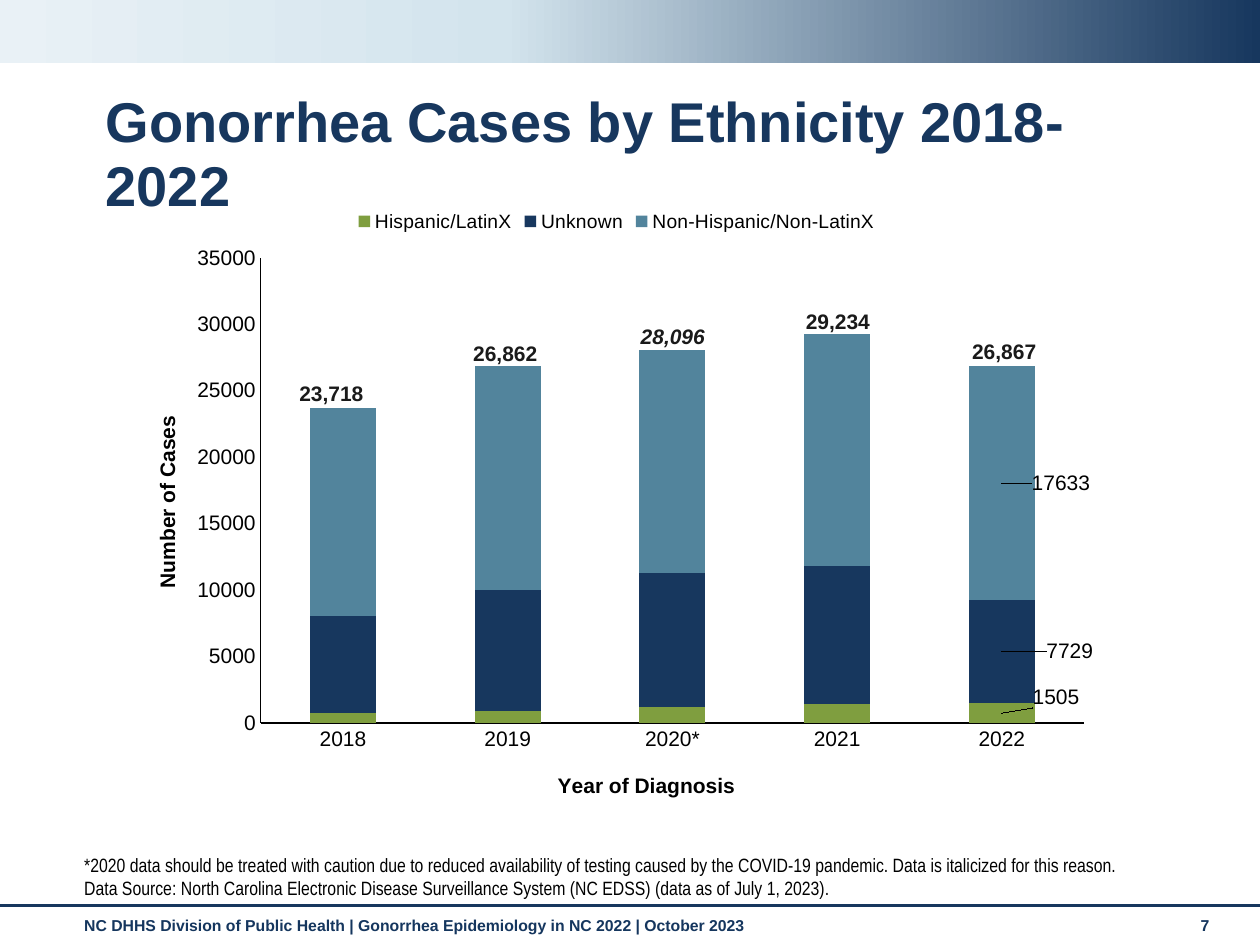
from copy import deepcopy

from lxml import etree
from pptx import Presentation
from pptx.chart.data import CategoryChartData
from pptx.dml.color import RGBColor
from pptx.enum import chart as charts, shapes, text
from pptx.oxml import parse_xml
from pptx.oxml.ns import nsdecls, qn
from pptx.util import Inches, Pt

COLORS = {
    "navy": "17375E", "footer": "15365E", "sky": "D3E4ED", "pale": "E9F1F6",
    "green": "7F9E3F", "teal": "52849C", "black": "000000", "total": "1A1A1A",
}
YEARS = ["2018", "2019", "2020*", "2021", "2022"]
# Name, colour, values, and offset of the 2022 label as a share of the chart
SERIES = [
    ("Hispanic/LatinX", "green", (745, 900, 1189, 1446, 1505), (0.055, -0.026)),
    ("Unknown", "navy", (7309, 9118, 10114, 10337, 7729), (0.069, 0)),
    ("Non-Hispanic/Non-LatinX", "teal", (15664, 16844, 16793, 17451, 17633), (0.06, 0)),
]
# Left, top, text and italic of the total above each column
TOTALS = [
    (2.14, 2.97, "23,718", False), (3.52, 2.65, "26,862", False),
    (4.85, 2.52, "28,096", True), (6.16, 2.4, "29,234", False),
    (7.48, 2.64, "26,867", False),
]


def rgb(name):
    return RGBColor.from_string(COLORS[name])


def style_font(font, size, color="black", bold=False, italic=False, name="Arial"):
    font.name, font.size = name, Pt(size)
    font.bold, font.italic = bold, italic
    font.color.rgb = rgb(color)


def add_text(page, place, lines, size, align=None, anchor=text.MSO_ANCHOR.TOP,
             spacing=None, **style):
    box = page.shapes.add_textbox(*map(Inches, place))
    frame = box.text_frame
    frame.word_wrap = True
    frame.vertical_anchor = anchor
    frame.text = "\n".join(lines)
    for para in frame.paragraphs:
        para.alignment = align
        para.line_spacing = spacing
        style_font(para.font, size, **style)


def add_banner(page):
    banner = page.shapes.add_shape(
        shapes.MSO_SHAPE.RECTANGLE, 0, 0, Inches(10), Inches(0.5))
    banner.shadow.inherit = False
    banner.line.fill.background()
    banner.fill.gradient()
    banner.fill.gradient_angle = 180
    stop_list = banner._element.spPr.find(".//" + qn("a:gsLst"))
    stop_list.insert(1, deepcopy(stop_list[0]))
    stops = ((0, "navy"), (0.6, "sky"), (1, "pale"))
    for stop, (position, color) in zip(banner.fill.gradient_stops, stops):
        stop.position = position
        stop.color.rgb = rgb(color)


def add_rule(page):
    rule = page.shapes.add_connector(
        shapes.MSO_CONNECTOR.STRAIGHT, 0, Inches(7.19), Inches(10), Inches(7.19))
    rule.line.color.rgb = rgb("navy")
    rule.line.width = Pt(1.75)
    etree.SubElement(rule._element.spPr, qn("a:effectLst"))


def set_layout(element, after, x, y, size=None):
    """Place a chart part by hand, right behind its child named after."""
    for old in element.findall(qn("c:layout")):
        element.remove(old)
    parts = {"x": x, "y": y}
    modes = ""
    if size:
        parts.update(w=size[0], h=size[1])
        modes = '<c:layoutTarget val="inner"/>'
    if element.tag != qn("c:dLbl"):
        modes += '<c:xMode val="edge"/><c:yMode val="edge"/>'
    values = "".join(f'<c:{key} val="{value}"/>' for key, value in parts.items())
    layout = parse_xml(f'<c:layout {nsdecls("c")}><c:manualLayout>'
                       f'{modes}{values}</c:manualLayout></c:layout>')
    if after is None:
        element.insert(0, layout)
    else:
        element.find(qn(after)).addnext(layout)


def style_axis(axis, title, x, y):
    axis.has_major_gridlines = False
    axis.major_tick_mark = axis.minor_tick_mark = charts.XL_TICK_MARK.NONE
    axis.format.line.color.rgb = rgb("black")
    axis.format.line.width = Pt(0.75)
    style_font(axis.tick_labels.font, 12)
    frame = axis.axis_title.text_frame
    frame.text = title
    style_font(frame.paragraphs[0].font, 12, bold=True)
    set_layout(axis.axis_title._element, "c:tx", x, y)


def style_series(series, color, offset):
    series.format.fill.solid()
    series.format.fill.fore_color.rgb = rgb(color)
    # Only the last year carries a value label, beside its column
    series.data_labels.show_value = False
    label = series.points[len(YEARS) - 1].data_label
    style_font(label.font, 12)
    label.position = charts.XL_LABEL_POSITION.CENTER
    set_layout(series._element.find(".//" + qn("c:dLbl")), "c:idx", *offset)


def add_case_chart(page):
    data = CategoryChartData(number_format="General")
    data.categories = YEARS
    for name, _, values, _ in SERIES:
        data.add_series(name, values)
    chart = page.shapes.add_chart(
        charts.XL_CHART_TYPE.COLUMN_STACKED,
        *map(Inches, (0.96, 1.53, 7.81, 4.97)), data).chart
    chart.has_title = False
    style_font(chart.font, 10)

    plot = chart.plots[0]
    plot.gap_width, plot.overlap = 150, 100
    plot.vary_by_categories = False
    for series, (_, color, _, offset) in zip(plot.series, SERIES):
        style_series(series, color, offset)
    set_layout(chart._chartSpace.find(".//" + qn("c:plotArea")), None,
               0.142, 0.104, (0.837, 0.743))

    style_axis(chart.category_axis, "Year of Diagnosis", 0.44, 0.92)
    style_axis(chart.value_axis, "Number of Cases", 0.03, 0.35)
    chart.value_axis.minimum_scale = 0
    chart.value_axis.maximum_scale = 35000
    chart.value_axis.major_unit = 5000

    chart.has_legend = True
    chart.legend.position = charts.XL_LEGEND_POSITION.TOP
    chart.legend.include_in_layout = False
    style_font(chart.legend.font, 11)
    set_layout(chart.legend._element, "c:legendPos", 0.235, 0.02)


def main():
    deck = Presentation()
    deck.slide_width, deck.slide_height = Inches(10), Inches(7.5)
    page = deck.slides.add_slide(deck.slide_layouts[6])

    # Frame of the page
    add_text(page, (0.57, 7.22, 8.74, 0.29),
             ["NC DHHS Division of Public Health | Gonorrhea Epidemiology in NC 2022"
              " | October 2023"], 9, color="footer", bold=True)
    add_text(page, (9.43, 7.22, 0.44, 0.3), ["7"], 9, color="footer", bold=True)
    add_banner(page)
    add_rule(page)

    # Title and notes on the data
    add_text(page, (0.74, 0.68, 8.58, 0.6), ["Gonorrhea Cases by Ethnicity 2018-2022"],
             32, spacing=0.95, color="navy", bold=True)
    add_text(page, (0.57, 6.83, 9.1, 0.36),
             ["*2020 data should be treated with caution due to reduced availability of "
              "testing caused by the COVID-19 pandemic. Data is italicized for this reason.",
              "Data Source: North Carolina Electronic Disease Surveillance System "
              "(NC EDSS) (data as of July 1, 2023)."],
             11, anchor=text.MSO_ANCHOR.BOTTOM, name="Arial Narrow")

    # Chart with a total above each column
    add_case_chart(page)
    for left, top, total, italic in TOTALS:
        add_text(page, (left, top, 0.98, 0.3), [total], 12, text.PP_ALIGN.CENTER,
                 color="total", bold=True, italic=italic)

    deck.save("out.pptx")


if __name__ == "__main__":
    main()
